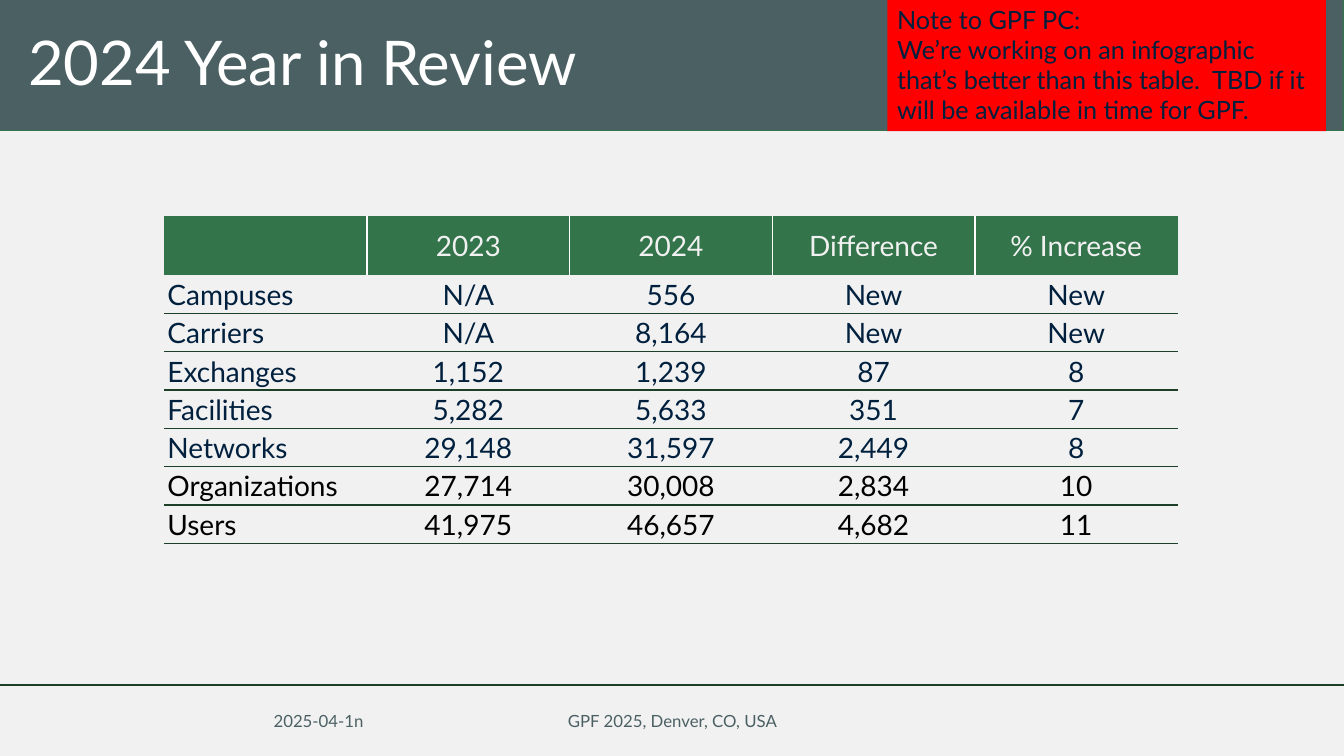
from dataclasses import dataclass

from lxml import etree
from pptx import Presentation
from pptx.dml.color import RGBColor
from pptx.enum.shapes import MSO_CONNECTOR, MSO_SHAPE
from pptx.enum.text import MSO_ANCHOR, PP_ALIGN
from pptx.oxml.ns import qn
from pptx.util import Inches, Pt

LEFT, CENTER = PP_ALIGN.LEFT, PP_ALIGN.CENTER
TOP, MIDDLE, BOTTOM = MSO_ANCHOR.TOP, MSO_ANCHOR.MIDDLE, MSO_ANCHOR.BOTTOM
RECTANGLE, STRAIGHT = MSO_SHAPE.RECTANGLE, MSO_CONNECTOR.STRAIGHT

FONT = "Lato"
PAPER = RGBColor(0xF1, 0xF1, 0xF1)
SLATE = RGBColor(0x4B, 0x60, 0x63)
GREEN = RGBColor(0x33, 0x74, 0x4A)
DARK_GREEN = RGBColor(0x1C, 0x3F, 0x28)
NAVY = RGBColor(0x00, 0x20, 0x3E)
RED = RGBColor(0xFF, 0x00, 0x00)
WHITE = RGBColor(0xFF, 0xFF, 0xFF)
BLACK = RGBColor(0x00, 0x00, 0x00)

PLAIN_TABLE_STYLE = "{2D5ABB26-0587-4C30-8999-92F81FD0307C}"
SLIDE_W, SLIDE_H = 13.33, 7.5
COLUMN_W, HEADER_H, ROW_H = 2.01, 0.59, 0.38


@dataclass
class Bar:
    left: float
    top: float
    width: float
    height: float
    fill: RGBColor
    line: RGBColor | None = None


@dataclass
class FooterText:
    text: str
    left: float
    width: float


@dataclass
class Row:
    values: tuple[str, ...]
    color: RGBColor = NAVY


BAND = Bar(0, 0, SLIDE_W, 1.3, SLATE, GREEN)
NOTE = Bar(8.8, -0.01, 4.35, 1.31, RED)
NOTE_TEXT = (
    "Note to GPF PC:\n"
    "We’re working on an infographic that’s better than this table.  "
    "TBD if it will be available in time for GPF."
)
FOOTERS = [
    FooterText("2025-04-1n", 2.41, 1.5),
    FooterText("GPF 2025, Denver, CO, USA", 4.42, 4.5),
]
HEADERS = ("", "2023", "2024", "Difference", "% Increase")
ROWS = [
    Row(("Campuses", "N/A", "556", "New", "New")),
    Row(("Carriers", "N/A", "8,164", "New", "New")),
    Row(("Exchanges", "1,152", "1,239", "87", "8")),
    Row(("Facilities", "5,282", "5,633", "351", "7")),
    Row(("Networks", "29,148", "31,597", "2,449", "8")),
    Row(("Organizations", "27,714", "30,008", "2,834", "10"), BLACK),
    Row(("Users", "41,975", "46,657", "4,682", "11"), BLACK),
]


def write(tf, text: str, *, size: float, color: RGBColor, align=LEFT,
          anchor=MIDDLE, spacing: float = 1.0) -> None:
    tf.word_wrap = True
    tf.vertical_anchor = anchor
    for i, line in enumerate(text.split("\n")):
        p = tf.paragraphs[0] if i == 0 else tf.add_paragraph()
        p.alignment = align
        p.line_spacing = spacing
        p.font.size = Pt(size)
        r = p.add_run()
        r.text = line
        r.font.name = FONT
        r.font.size = Pt(size)
        r.font.color.rgb = color


def add_bar(s, bar: Bar):
    sp = s.shapes.add_shape(RECTANGLE, Inches(bar.left), Inches(bar.top),
                            Inches(bar.width), Inches(bar.height))
    sp.shadow.inherit = False
    sp.fill.solid()
    sp.fill.fore_color.rgb = bar.fill
    if bar.line is None:
        sp.line.fill.background()
    else:
        sp.line.color.rgb = bar.line
        sp.line.width = Pt(0.75)
    return sp


def add_title(s, text: str, band) -> None:
    title = s.shapes.title
    band.element.addnext(title.element)
    title.left, title.top = Inches(0.18), Inches(0.1)
    title.width, title.height = Inches(12.98), Inches(1.1)
    write(title.text_frame, text, size=44, color=WHITE, spacing=0.9)


def add_footer(s) -> None:
    rule = s.shapes.add_connector(STRAIGHT, 0, Inches(6.8), Inches(SLIDE_W), Inches(6.8))
    rule.line.color.rgb = DARK_GREEN
    rule.line.width = Pt(1.5)
    etree.SubElement(rule.element.spPr, qn("a:effectLst"))
    for item in FOOTERS:
        sp = s.shapes.add_textbox(Inches(item.left), Inches(6.95),
                                  Inches(item.width), Inches(0.4))
        write(sp.text_frame, item.text, size=12, color=SLATE, align=CENTER)


def add_border(cell, side: str, color: RGBColor) -> None:
    ln = etree.SubElement(cell._tc.get_or_add_tcPr(), qn(f"a:{side}"), w=str(Pt(1)))
    fill = etree.SubElement(ln, qn("a:solidFill"))
    etree.SubElement(fill, qn("a:srgbClr"), val=str(color))


def format_cell(cell, text: str, *, margin_x: float, margin_y: float, **text_format) -> None:
    cell.margin_left = cell.margin_right = Inches(margin_x)
    cell.margin_top = cell.margin_bottom = Inches(margin_y)
    cell.vertical_anchor = text_format["anchor"]
    write(cell.text_frame, text, size=20, **text_format)


def add_review_table(s) -> None:
    columns = len(HEADERS)
    frame = s.shapes.add_table(len(ROWS) + 1, columns, Inches(1.63), Inches(2.14),
                               Inches(COLUMN_W * columns),
                               Inches(HEADER_H + ROW_H * len(ROWS)))
    table = frame.table
    table.horz_banding = False
    table._tbl.tblPr.find(qn("a:tableStyleId")).text = PLAIN_TABLE_STYLE
    for column in table.columns:
        column.width = Inches(COLUMN_W)
    for i, row in enumerate(table.rows):
        row.height = Inches(ROW_H if i else HEADER_H)

    for j, text in enumerate(HEADERS):
        cell = table.cell(0, j)
        if j > 0:
            add_border(cell, "lnL", WHITE)
        if j < columns - 1:
            add_border(cell, "lnR", WHITE)
        cell.fill.solid()
        cell.fill.fore_color.rgb = GREEN
        format_cell(cell, text, margin_x=0.05, margin_y=0.05,
                    color=PAPER, align=CENTER, anchor=MIDDLE)
    for i, row in enumerate(ROWS, 1):
        for j, text in enumerate(row.values):
            cell = table.cell(i, j)
            add_border(cell, "lnB", DARK_GREEN)
            cell.fill.background()
            format_cell(cell, text, margin_x=0.03, margin_y=0.02, color=row.color,
                        align=CENTER if j else LEFT, anchor=BOTTOM)


def main() -> None:
    prs = Presentation()
    prs.slide_width, prs.slide_height = Inches(SLIDE_W), Inches(SLIDE_H)
    s = prs.slides.add_slide(prs.slide_layouts[5])
    s.background.fill.solid()
    s.background.fill.fore_color.rgb = PAPER
    add_title(s, "2024 Year in Review", add_bar(s, BAND))
    add_footer(s)
    note = add_bar(s, NOTE)
    write(note.text_frame, NOTE_TEXT, size=18, color=NAVY, anchor=TOP)
    add_review_table(s)
    prs.save("out.pptx")


if __name__ == "__main__":
    main()
